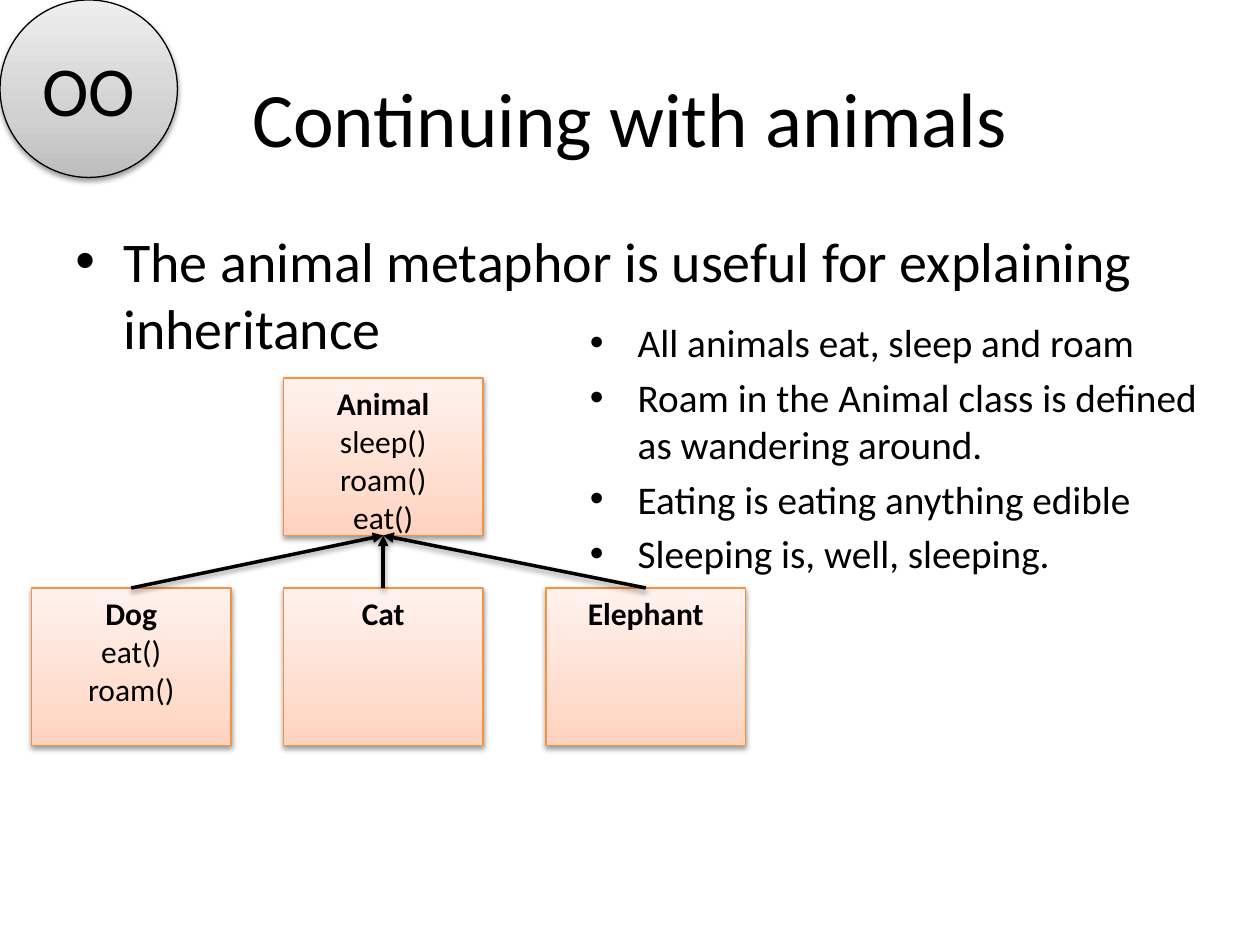
import copy
from dataclasses import dataclass

import pptx
import pptx.dml.color
import pptx.enum.shapes
import pptx.enum.text
import pptx.oxml
import pptx.oxml.ns
import pptx.util

COLUMNS, ROWS = 120, 90
qn = pptx.oxml.ns.qn
SHAPES = pptx.enum.shapes.MSO_SHAPE
ALIGN = pptx.enum.text.PP_ALIGN
ANCHOR = pptx.enum.text.MSO_ANCHOR


@dataclass(frozen=True)
class Theme:
    font: str = "Calibri"
    ink: str = "000000"
    class_line: str = "F69240"
    class_fill: tuple = ((0, "FFD2BD"), (0.35, "FFDED0"), (1, "FFF2ED"))
    badge_fill: tuple = ((0, "BDBDBD"), (0.35, "D1D1D1"), (1, "EEEEEE"))
    title_size: float = 44
    badge_size: float = 40
    body_size: float = 32
    detail_size: float = 22.4
    class_size: float = 18


@dataclass(frozen=True)
class Area:
    column: float
    row: float
    columns: float
    rows: float


@dataclass(frozen=True)
class AnimalClass:
    name: str
    column: float
    row: float
    methods: tuple = ()


THEME = Theme()
CLASS_COLUMNS, CLASS_ROWS = 19, 15
PARENT = AnimalClass("Animal", 27, 36, ("sleep()", "roam()", "eat()"))
CHILDREN = (
    AnimalClass("Dog", 3, 56, ("eat()", "roam()")),
    AnimalClass("Cat", 27, 56),
    AnimalClass("Elephant", 52, 56),
)
DETAILS = (
    "All animals eat, sleep and roam",
    "Roam in the Animal class is defined as wandering around.",
    "Eating is eating anything edible",
    "Sleeping is, well, sleeping.",
)

deck = pptx.Presentation()
deck.slide_width, deck.slide_height = pptx.util.Inches(10), pptx.util.Inches(7.5)


def place(area: Area) -> tuple:
    """Turn grid columns and rows into left, top, width and height."""
    across, down = deck.slide_width / COLUMNS, deck.slide_height / ROWS
    return (round(area.column * across), round(area.row * down),
            round(area.columns * across), round(area.rows * down))


def rgb(value: str) -> pptx.dml.color.RGBColor:
    return pptx.dml.color.RGBColor.from_string(value)


def write(para, text: str, size: float, bold: bool = False) -> None:
    span = para.add_run()
    span.text = text
    # Some viewers ignore paragraph fonts, so the run gets the same one
    for font in (para.font, span.font):
        font.name, font.size, font.bold = THEME.font, pptx.util.Pt(size), bold
        font.color.rgb = rgb(THEME.ink)


def next_paragraph(frame, index: int):
    return frame.add_paragraph() if index else frame.paragraphs[0]


def add_shadow(properties) -> None:
    effects = properties.find(qn("a:effectLst"))
    if effects is None:
        effects = properties.makeelement(qn("a:effectLst"), {})
        properties.append(effects)
    effects.append(pptx.oxml.parse_xml(
        f'<a:outerShdw {pptx.oxml.ns.nsdecls("a")} blurRad="40000" dist="20000" '
        f'dir="5400000" rotWithShape="0"><a:srgbClr val="{THEME.ink}">'
        '<a:alpha val="38000"/></a:srgbClr></a:outerShdw>'))


def add_gradient_shape(page, kind, area: Area, stops: tuple, line: str):
    shape = page.shapes.add_shape(kind, *place(area))
    shape.fill.gradient()
    shape.fill.gradient_angle = 90
    stop_list = shape._element.spPr.find(".//" + qn("a:gsLst"))
    stop_list.append(copy.deepcopy(stop_list[0]))
    for stop, (position, color) in zip(shape.fill.gradient_stops, stops):
        stop.position, stop.color.rgb = position, rgb(color)
    shape.line.color.rgb, shape.line.width = rgb(line), pptx.util.Pt(0.75)
    shape.shadow.inherit = False
    add_shadow(shape._element.spPr)
    return shape


def add_class(page, animal: AnimalClass):
    area = Area(animal.column, animal.row, CLASS_COLUMNS, CLASS_ROWS)
    box = add_gradient_shape(page, SHAPES.RECTANGLE, area, THEME.class_fill, THEME.class_line)
    box.text_frame.vertical_anchor = ANCHOR.TOP
    for index, text in enumerate((animal.name, *animal.methods)):
        para = next_paragraph(box.text_frame, index)
        para.alignment = ALIGN.CENTER
        write(para, text, THEME.class_size, bold=index == 0)
    return box


def add_inheritance(page, child, parent) -> None:
    arrow = page.shapes.add_connector(pptx.enum.shapes.MSO_CONNECTOR.STRAIGHT, 0, 0, 0, 0)
    arrow.begin_connect(child, 0)
    arrow.end_connect(parent, 2)
    arrow.line.color.rgb, arrow.line.width = rgb(THEME.ink), pptx.util.Pt(2)
    properties = arrow._element.spPr
    line = properties.find(qn("a:ln"))
    line.append(line.makeelement(qn("a:tailEnd"), {"type": "triangle"}))
    add_shadow(properties)


def add_bullets(page, area: Area, texts: tuple, size: float, first_spacing: float = 1) -> None:
    frame = page.shapes.add_textbox(*place(area)).text_frame
    frame.word_wrap = True
    for index, text in enumerate(texts):
        para = next_paragraph(frame, index)
        para.space_before = pptx.util.Pt(size * 0.2)
        if index == 0:
            para.line_spacing = first_spacing
        settings = para._p.get_or_add_pPr()
        indent = pptx.util.Inches(0.38)
        settings.set("marL", str(indent))
        settings.set("indent", str(-indent))
        for tag, attributes in (("a:buFont", {"typeface": "Arial"}), ("a:buChar", {"char": "•"})):
            settings.append(settings.makeelement(qn(tag), attributes))
        write(para, text, size)


def main() -> None:
    page = deck.slides.add_slide(deck.slide_layouts[5])

    # Title
    title = page.shapes.title
    title.left, title.top, title.width, title.height = place(Area(6, 3.6, 108, 15))
    title.text_frame.vertical_anchor = ANCHOR.MIDDLE
    title.text_frame.paragraphs[0].alignment = ALIGN.CENTER
    write(title.text_frame.paragraphs[0], "Continuing with animals", THEME.title_size)

    # Main statement
    add_bullets(page, Area(6, 21, 108, 59.4),
                ("The animal metaphor is useful for explaining inheritance",), THEME.body_size)

    # Class diagram
    parent = add_class(page, PARENT)
    children = [add_class(page, animal) for animal in CHILDREN]
    for child in children:
        add_inheritance(page, child, parent)

    # Details beside the diagram
    add_bullets(page, Area(55, 30.6, 61, 23.4), DETAILS, THEME.detail_size, first_spacing=0.8)

    # Corner badge
    badge = add_gradient_shape(page, SHAPES.OVAL, Area(0, 0, 16.9, 16.9),
                               THEME.badge_fill, THEME.ink)
    badge.text_frame.vertical_anchor = ANCHOR.MIDDLE
    badge.text_frame.paragraphs[0].alignment = ALIGN.CENTER
    write(badge.text_frame.paragraphs[0], "OO", THEME.badge_size)

    deck.save("out.pptx")


if __name__ == "__main__":
    main()
